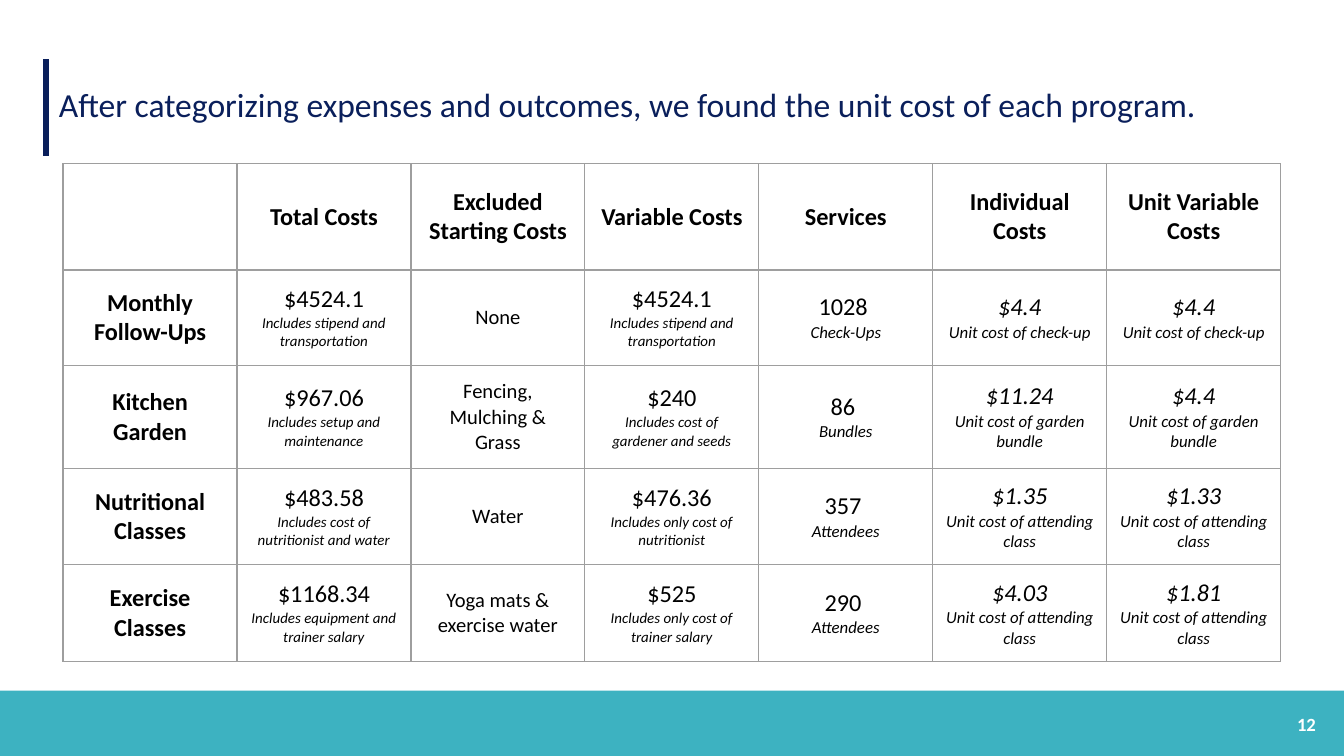
from lxml import etree
from pptx import Presentation
from pptx.dml.color import RGBColor
from pptx.enum import shapes, text
from pptx.oxml import ns
from pptx.util import Pt

NAVY = RGBColor(0x0A, 0x1F, 0x5B)
TEAL = RGBColor(0x3D, 0xB2, 0xC1)
WHITE = RGBColor(0xFF, 0xFF, 0xFF)
BLACK = RGBColor(0, 0, 0)
GRID = RGBColor(0x9E, 0x9E, 0x9E)
FONT = "Calibri"
INSET = Pt(7.2)

HEADERS = ["", "Total Costs", "Excluded Starting Costs", "Variable Costs",
           "Services", "Individual Costs", "Unit Variable Costs"]
# Program, then each column as (value, note) or a plain text
PROGRAMS = [
    ("Monthly Follow-Ups",
     ("$4524.1", "Includes stipend and transportation"), "None",
     ("$4524.1", "Includes stipend and transportation"),
     ("1028 ", "Check-Ups"), "$4.4", "$4.4", "Unit cost of check-up"),
    ("Kitchen Garden",
     ("$967.06", "Includes setup and maintenance"), "Fencing, Mulching & Grass",
     ("$240", "Includes cost of gardener and seeds"),
     ("86 ", "Bundles"), "$11.24", "$4.4", "Unit cost of garden bundle"),
    ("Nutritional Classes",
     ("$483.58", "Includes cost of nutritionist and water"), "Water",
     ("$476.36", "Includes only cost of nutritionist"),
     ("357 ", "Attendees"), "$1.35", "$1.33", "Unit cost of attending class"),
    ("Exercise Classes",
     ("$1168.34", "Includes equipment and trainer salary"),
     "Yoga mats & exercise water",
     ("$525", "Includes only cost of trainer salary"),
     ("290 ", "Attendees"), "$4.03", "$1.81", "Unit cost of attending class"),
]
ROW_HEIGHTS = [57, 51.2, 55, 49, 49]


def style(paragraph, size, color, bold=False, italic=False,
          align=text.PP_ALIGN.CENTER):
    paragraph.alignment = align
    font = paragraph.font
    font.name, font.size, font.bold, font.italic = FONT, Pt(size), bold, italic
    font.color.rgb = color


def add_label(slide, words, left, top, width, height, **look):
    frame = slide.shapes.add_textbox(Pt(left), Pt(top), Pt(width), Pt(height)).text_frame
    frame.word_wrap = True
    frame.vertical_anchor = text.MSO_ANCHOR.MIDDLE
    frame.margin_left = frame.margin_right = INSET
    frame.margin_top = frame.margin_bottom = INSET
    frame.text = words
    style(frame.paragraphs[0], **look)


def add_heading(slide, left, top, width, height):
    rule = slide.shapes.add_connector(shapes.MSO_CONNECTOR.STRAIGHT,
                                      Pt(left), Pt(top), Pt(left), Pt(top + height))
    rule.line.color.rgb = NAVY
    rule.line.width = Pt(3)
    etree.SubElement(rule.line._get_or_add_ln().getparent(), ns.qn("a:effectLst"))
    add_label(slide, "After categorizing expenses and outcomes, we found the "
              "unit cost of each program.", left, top + 1.4, width, 45.4,
              size=18, color=NAVY, align=text.PP_ALIGN.LEFT)


def add_footer(slide, left, top, width, height):
    band = slide.shapes.add_shape(shapes.MSO_SHAPE.RECTANGLE,
                                  Pt(left), Pt(top), Pt(width), Pt(height))
    band.shadow.inherit = False
    band.fill.solid()
    band.fill.fore_color.rgb = TEAL
    band.line.fill.background()
    add_label(slide, "12", left + width - 51.2, top + 2.2, 43.2, 31,
              size=10, color=WHITE, bold=True, align=text.PP_ALIGN.RIGHT)


def outline(cell):
    properties = cell._tc.get_or_add_tcPr()
    for position, side in enumerate(("lnL", "lnR", "lnT", "lnB")):
        edge = etree.Element(ns.qn(f"a:{side}"), w=str(Pt(0.75)))
        fill = etree.SubElement(edge, ns.qn("a:solidFill"))
        etree.SubElement(fill, ns.qn("a:srgbClr"), val=str(GRID))
        properties.insert(position, edge)


def fill_cell(cell, lines):
    """Write lines of (words, look) into a bordered, unfilled cell."""
    cell.fill.background()
    outline(cell)
    cell.vertical_anchor = text.MSO_ANCHOR.MIDDLE
    cell.margin_left = cell.margin_right = INSET
    cell.margin_top = cell.margin_bottom = INSET
    cell.text = "\n".join(words for words, _ in lines)
    for paragraph, (_, look) in zip(cell.text_frame.paragraphs, lines):
        style(paragraph, color=BLACK, **look)


def program_cells(program):
    name, total, excluded, variable, services, individual, unit, basis = program

    def noted(value, note, note_size, italic=False):
        return [(value, dict(size=13, italic=italic)),
                (note, dict(size=note_size, italic=True))]

    return [[(name, dict(size=13, bold=True))],
            noted(*total, 8),
            [(excluded, dict(size=11))],
            noted(*variable, 8),
            noted(*services, 9),
            noted(individual, basis, 9, italic=True),
            noted(unit, basis, 9, italic=True)]


def add_cost_table(slide, left, top, width):
    rows = [[[(header, dict(size=13, bold=True))] for header in HEADERS]]
    rows += [program_cells(program) for program in PROGRAMS]
    table = slide.shapes.add_table(len(rows), len(HEADERS), Pt(left), Pt(top),
                                   Pt(width), Pt(sum(ROW_HEIGHTS))).table
    table.first_row = table.horz_banding = False
    for column in table.columns:
        column.width = Pt(width / len(HEADERS))
    for row, height, cells in zip(table.rows, ROW_HEIGHTS, rows):
        row.height = Pt(height)
        for cell, lines in zip(row.cells, cells):
            fill_cell(cell, lines)


def main():
    deck = Presentation()
    deck.slide_width, deck.slide_height = Pt(720), Pt(405)
    slide = deck.slides.add_slide(deck.slide_layouts[6])
    add_footer(slide, -0.5, 370, 720.5, 35)
    add_heading(slide, 24.5, 31.7, 678, 51.8)
    add_cost_table(slide, 33.8, 87.7, 652.4)
    deck.save("out.pptx")


if __name__ == "__main__":
    main()
